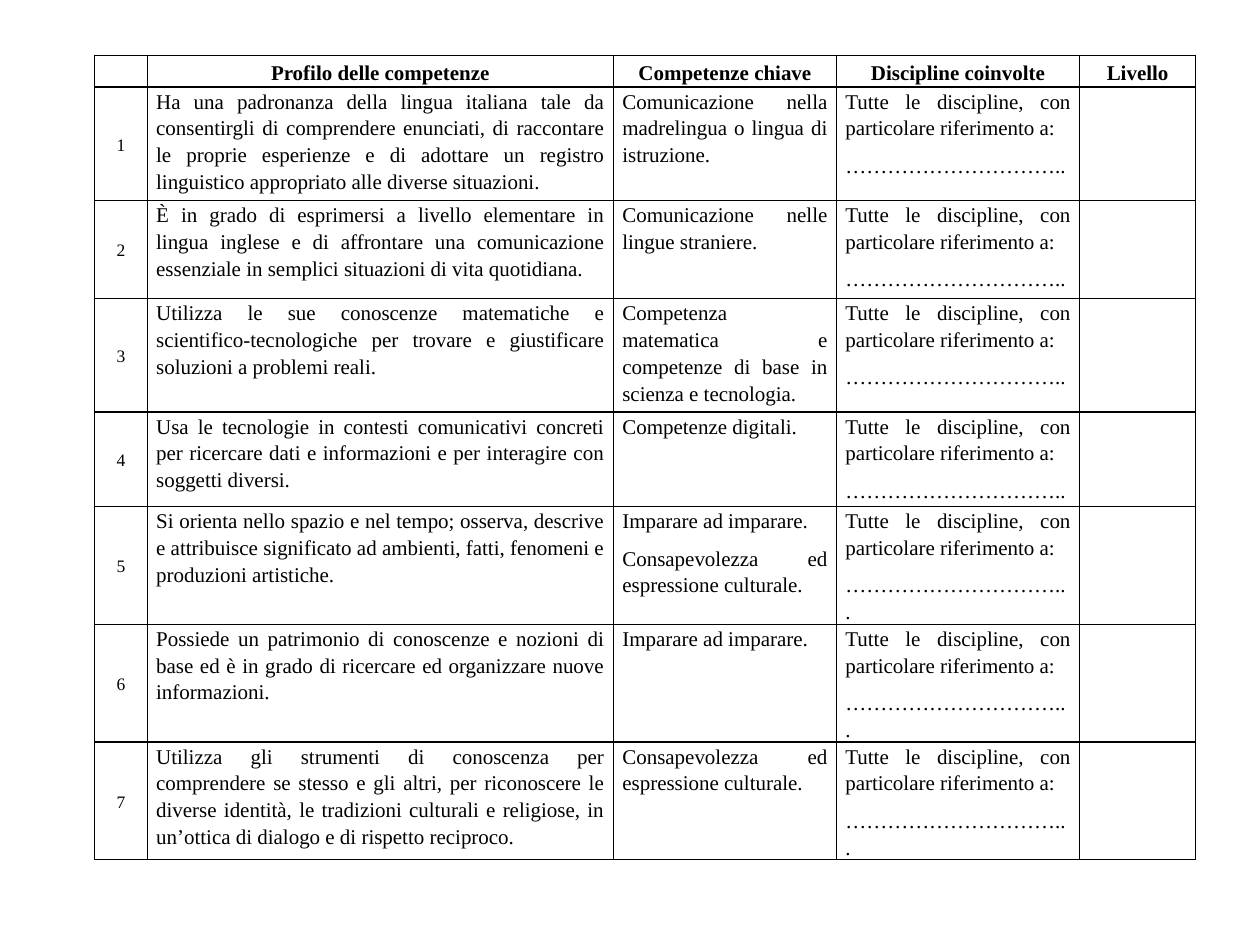
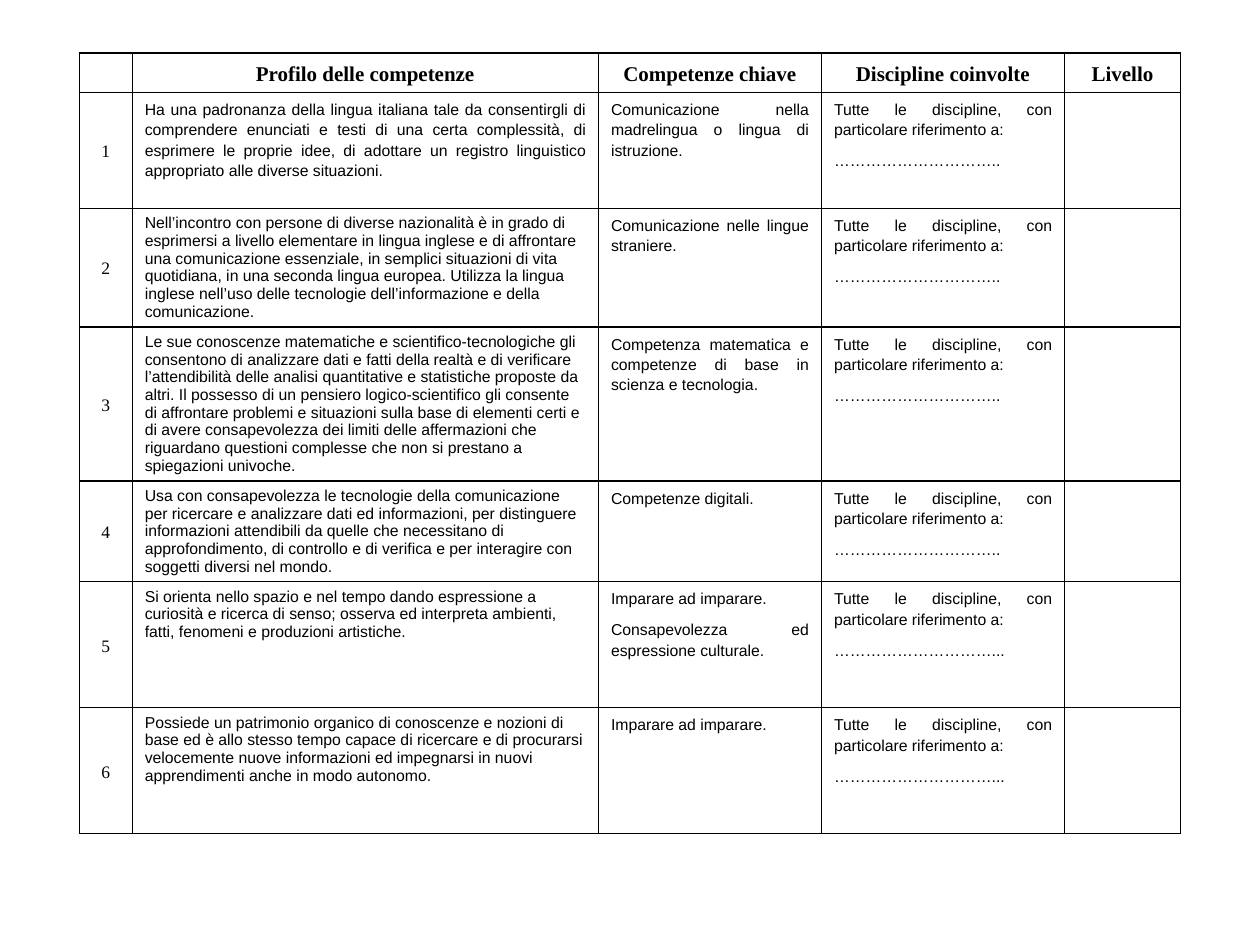
from lxml.etree import SubElement
from pptx import Presentation
from pptx.dml.color import RGBColor
from pptx.enum.text import MSO_ANCHOR, PP_ALIGN
from pptx.oxml.ns import qn
from pptx.util import Inches, Pt

# Shared style
BLACK = "000000"
SERIF, SANS = "Times New Roman", "Arial"
LINE_SPACING = 1.15
COL_WIDTHS = [0.42, 3.7, 1.77, 1.93, 0.92]
HEADERS = ["", "Profilo delle competenze", "Competenze chiave",
           "Discipline coinvolte", "Livello"]

# Shared wording
SUBJECTS = "Tutte le discipline, con particolare riferimento a:"
DOTS = "…………………………"
LONG_DOTS_FROM = 5
KEY_SKILLS = [
    ["Comunicazione nella madrelingua o lingua di istruzione."],
    ["Comunicazione nelle lingue straniere."],
    ["Competenza matematica e competenze di base in scienza e tecnologia."],
    ["Competenze digitali."],
    ["Imparare ad imparare.", "Consapevolezza ed espressione culturale."],
    ["Imparare ad imparare."],
    ["Consapevolezza ed espressione culturale."],
]

# Profiles of each slide
BASIC_PROFILES = [
    "Ha una padronanza della lingua italiana tale da consentirgli di "
    "comprendere enunciati, di raccontare le proprie esperienze e di adottare "
    "un registro linguistico appropriato alle diverse situazioni.",
    "È in grado di esprimersi a livello elementare in lingua inglese e di "
    "affrontare una comunicazione essenziale in semplici situazioni di vita "
    "quotidiana.",
    "Utilizza le sue conoscenze matematiche e scientifico-tecnologiche per "
    "trovare e giustificare soluzioni a problemi reali.",
    "Usa le tecnologie in contesti comunicativi concreti per ricercare dati e "
    "informazioni e per interagire con soggetti diversi.",
    "Si orienta nello spazio e nel tempo; osserva, descrive e attribuisce "
    "significato ad ambienti, fatti, fenomeni e produzioni artistiche.",
    "Possiede un patrimonio di conoscenze e nozioni di base ed è in grado di "
    "ricercare ed organizzare nuove informazioni.",
    "Utilizza gli strumenti di conoscenza per comprendere se stesso e gli "
    "altri, per riconoscere le diverse identità, le tradizioni culturali e "
    "religiose, in un’ottica di dialogo e di rispetto reciproco.",
]
ADVANCED_PROFILES = [
    "Ha una padronanza della lingua italiana tale da consentirgli di "
    "comprendere enunciati e testi di una certa complessità, di esprimere le "
    "proprie idee, di adottare un registro linguistico appropriato alle "
    "diverse situazioni.",
    "Nell’incontro con persone di diverse nazionalità è in grado di esprimersi "
    "a livello elementare in lingua inglese e di affrontare una comunicazione "
    "essenziale, in semplici situazioni di vita quotidiana, in una seconda "
    "lingua europea. Utilizza la lingua inglese nell’uso delle tecnologie "
    "dell’informazione e della comunicazione.",
    "Le sue conoscenze matematiche e scientifico-tecnologiche gli consentono "
    "di analizzare dati e fatti della realtà e di verificare l’attendibilità "
    "delle analisi quantitative e statistiche proposte da altri. Il possesso "
    "di un pensiero logico-scientifico gli consente di affrontare problemi e "
    "situazioni sulla base di elementi certi e di avere consapevolezza dei "
    "limiti delle affermazioni che riguardano questioni complesse che non si "
    "prestano a spiegazioni univoche.",
    "Usa con consapevolezza le tecnologie della comunicazione per ricercare e "
    "analizzare dati ed informazioni, per distinguere informazioni attendibili "
    "da quelle che necessitano di approfondimento, di controllo e di verifica "
    "e per interagire con soggetti diversi nel mondo.",
    "Si orienta nello spazio e nel tempo dando espressione a curiosità e "
    "ricerca di senso; osserva ed interpreta ambienti, fatti, fenomeni e "
    "produzioni artistiche.",
    "Possiede un patrimonio organico di conoscenze e nozioni di base ed è allo "
    "stesso tempo capace di ricercare e di procurarsi velocemente nuove "
    "informazioni ed impegnarsi in nuovi apprendimenti anche in modo autonomo.",
]


def rgb(color):
    return RGBColor.from_string(color)


def style_cell(cell, inset_x, inset_y):
    """Draw thin black borders, clear the fill and set the insets."""
    tc_pr = cell._tc.get_or_add_tcPr()
    for side in ("lnL", "lnR", "lnT", "lnB"):
        ln = SubElement(tc_pr, qn(f"a:{side}"), w=str(Pt(1)))
        fill = SubElement(ln, qn("a:solidFill"))
        SubElement(fill, qn("a:srgbClr"), val=BLACK)
    cell.fill.background()
    cell.margin_left = cell.margin_right = Inches(inset_x)
    cell.margin_top = cell.margin_bottom = Inches(inset_y)


def write_cell(cell, texts, size, font=SERIF, bold=False, align=PP_ALIGN.CENTER,
               anchor=MSO_ANCHOR.MIDDLE, spacing=LINE_SPACING):
    cell.vertical_anchor = anchor
    tf = cell.text_frame
    for i, text in enumerate(texts):
        p = tf.add_paragraph() if i else tf.paragraphs[0]
        p.alignment = align
        p.line_spacing = spacing
        if i:
            p.space_before = Pt(3)
        if len(texts) > 1:
            p.space_after = Pt(3)
        if not text:
            # Keep an empty cell from stretching its row
            SubElement(p._p, qn("a:endParaRPr"), sz="1000")
            continue
        r = p.add_run()
        r.text = text
        r.font.name = font
        r.font.size = Pt(size)
        r.font.bold = bold
        r.font.color.rgb = rgb(BLACK)


def write_row(cells, number, profile, body, profile_style):
    dots = DOTS + ("..." if number >= LONG_DOTS_FROM else "..")
    write_cell(cells[0], [str(number)], 10)
    write_cell(cells[1], [profile], **{**body, **profile_style})
    write_cell(cells[2], KEY_SKILLS[number - 1], **body)
    write_cell(cells[3], [SUBJECTS, dots], **body)
    write_cell(cells[4], [""], 10)


def add_skills_table(prs, left, top, row_heights, profiles, size, font,
                     inset_x, inset_y, loose_from=None):
    """Add a slide with its table; profiles from loose_from on are ragged."""
    slide = prs.slides.add_slide(prs.slide_layouts[6])
    frame = slide.shapes.add_table(
        len(row_heights), len(COL_WIDTHS), Inches(left), Inches(top),
        Inches(sum(COL_WIDTHS)), Inches(sum(row_heights)))
    table = frame.table
    table.first_row = table.horz_banding = False
    for column, width in zip(table.columns, COL_WIDTHS):
        column.width = Inches(width)
    for row, height in zip(table.rows, row_heights):
        row.height = Inches(height)
    for cell in table.iter_cells():
        style_cell(cell, inset_x, inset_y)

    # Header row
    for cell, header in zip(table.rows[0].cells, HEADERS):
        write_cell(cell, [header], 12, bold=True)

    # One row per profile
    body = dict(size=size, font=font, align=PP_ALIGN.JUSTIFY,
                anchor=MSO_ANCHOR.TOP)
    for number, profile in enumerate(profiles, 1):
        loose = loose_from is not None and number >= loose_from
        style = dict(align=PP_ALIGN.LEFT, spacing=1.0) if loose else {}
        write_row(list(table.rows[number].cells), number, profile, body, style)


def main():
    prs = Presentation()
    prs.slide_width, prs.slide_height = Inches(10), Inches(7.5)
    add_skills_table(prs, 0.75, 0.44,
                     [0.25, 0.9, 0.78, 0.9, 0.75, 0.78, 0.78, 0.9],
                     BASIC_PROFILES, 12, SERIF, 0.07, 0)
    add_skills_table(prs, 0.63, 0.42, [0.25, 0.92, 0.78, 0.92, 0.77, 1, 1],
                     ADVANCED_PROFILES, 9, SANS, 0.1, 0.05, loose_from=2)
    prs.save("out.pptx")


if __name__ == "__main__":
    main()
